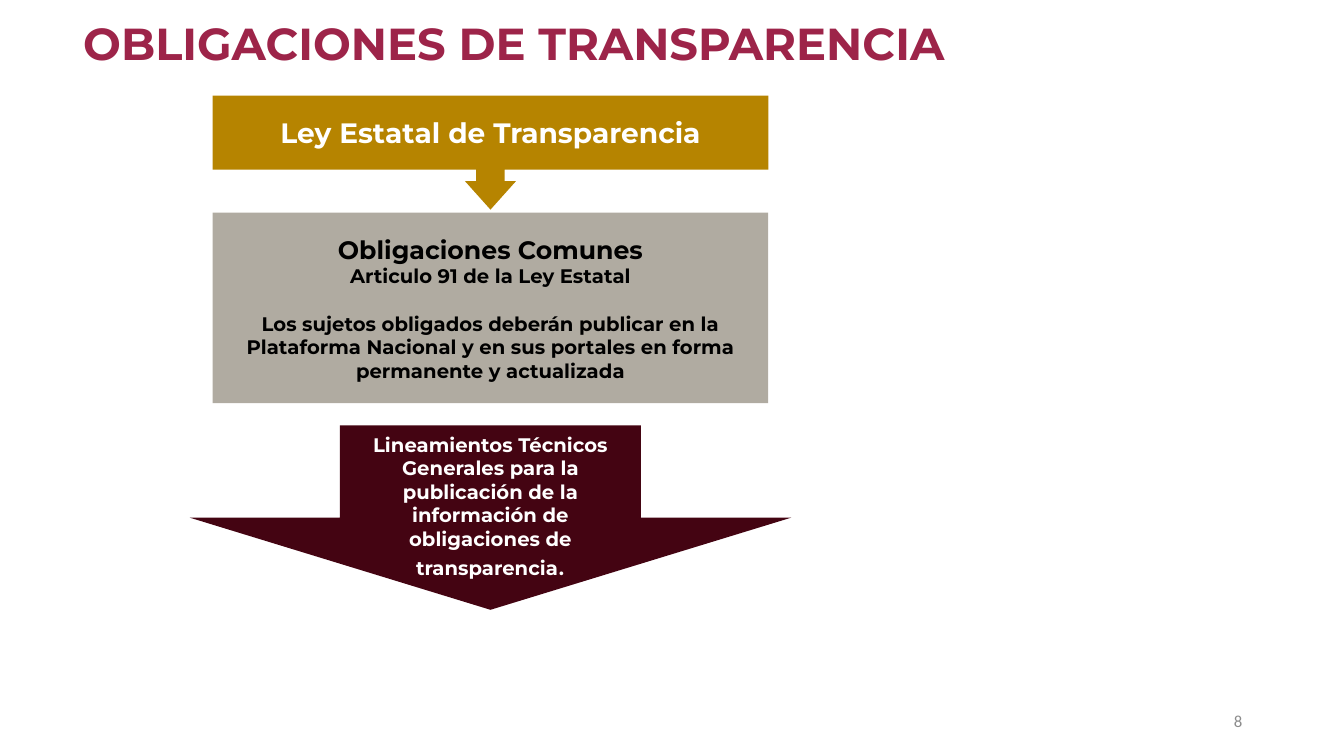
from dataclasses import dataclass

from pptx import Presentation
from pptx.dml.color import RGBColor
from pptx.enum.shapes import MSO_SHAPE
from pptx.enum.text import MSO_ANCHOR, PP_ALIGN
from pptx.util import Inches, Pt

RECT = MSO_SHAPE.RECTANGLE
CALLOUT = MSO_SHAPE.DOWN_ARROW_CALLOUT
DOWN_ARROW = MSO_SHAPE.DOWN_ARROW
TOP, MIDDLE, BOTTOM = MSO_ANCHOR.TOP, MSO_ANCHOR.MIDDLE, MSO_ANCHOR.BOTTOM
CENTER, RIGHT = PP_ALIGN.CENTER, PP_ALIGN.RIGHT


@dataclass(frozen=True)
class Theme:
    head_font: str = "Montserrat"
    body_font: str = "Calibri"
    title: str = "9D2449"
    gold: str = "B68400"
    stone: str = "B0ABA1"
    wine: str = "440412"
    white: str = "FFFFFF"
    black: str = "000000"
    gray: str = "8C8C8C"
    title_size: int = 32
    law_size: int = 20
    heading_size: int = 18
    text_size: int = 14
    number_size: int = 12


def add_run(p, text, *, font, size, color, bold=True):
    r = p.add_run()
    r.text = text
    r.font.name = font
    r.font.size = Pt(size)
    r.font.bold = bold
    r.font.color.rgb = RGBColor.from_string(color)


class SlideBuilder:
    def __init__(self, slide, theme):
        self.slide = slide
        self.theme = theme

    def paragraph(self, tf, text, align=CENTER, before=0, spacing=None, **fmt):
        """Write into the empty first paragraph, or append a new one."""
        first = tf.paragraphs[0]
        p = tf.add_paragraph() if first.runs else first
        p.alignment = align
        if before:
            p.space_before = Pt(before)
        if spacing:
            p.line_spacing = spacing
        add_run(p, text, **{"font": self.theme.head_font, **fmt})
        return p

    def text_box(self, left, top, width, height, anchor):
        s = self.slide.shapes.add_textbox(
            Inches(left), Inches(top), Inches(width), Inches(height))
        return self.frame(s, anchor)

    def shape(self, kind, left, top, width, height, fill, anchor=MIDDLE, adjust=()):
        s = self.slide.shapes.add_shape(
            kind, Inches(left), Inches(top), Inches(width), Inches(height))
        s.shadow.inherit = False
        s.fill.solid()
        s.fill.fore_color.rgb = RGBColor.from_string(fill)
        s.line.fill.background()
        for i, value in enumerate(adjust):
            s.adjustments[i] = value
        return self.frame(s, anchor)

    def frame(self, s, anchor):
        tf = s.text_frame
        tf.word_wrap = True
        tf.vertical_anchor = anchor
        return tf


def main():
    prs = Presentation()
    prs.slide_width, prs.slide_height = Inches(13.33), Inches(7.5)
    t = Theme()
    b = SlideBuilder(prs.slides.add_slide(prs.slide_layouts[6]), t)
    box_left, box_width = 2.11, 5.51

    tf = b.text_box(0, 0.09, 10.2, 0.66, BOTTOM)
    b.paragraph(tf, "OBLIGACIONES DE TRANSPARENCIA", spacing=0.9,
                size=t.title_size, color=t.title)

    tf = b.text_box(9.42, 6.95, 3, 0.4, MIDDLE)
    b.paragraph(tf, "8", RIGHT, font=t.body_font, size=t.number_size,
                color=t.gray, bold=False)

    tf = b.shape(CALLOUT, box_left, 0.95, box_width, 1.13, t.gold,
                 adjust=(0.25, 0.224, 0.25, 0.65))
    b.paragraph(tf, "Ley Estatal de Transparencia", size=t.law_size, color=t.white)

    tf = b.shape(RECT, box_left, 2.11, box_width, 1.89, t.stone)
    b.paragraph(tf, "Obligaciones Comunes", size=t.heading_size, color=t.black)
    b.paragraph(tf, "Articulo 91 de la Ley Estatal", size=t.text_size, color=t.black)
    b.paragraph(tf, "Los sujetos obligados deberán publicar en la Plataforma Nacional "
                "y en sus portales en forma permanente y actualizada",
                before=17, size=t.text_size, color=t.black)

    tf = b.shape(DOWN_ARROW, 1.88, 4.22, 5.97, 1.83, t.wine, TOP)
    tf.margin_top, tf.margin_bottom = Inches(0.07), 0
    p = b.paragraph(tf, "Lineamientos Técnicos Generales para la publicación de la "
                    "información de obligaciones de transparencia",
                    size=t.text_size, color=t.white)
    add_run(p, ".", font=t.body_font, size=t.heading_size, color=t.white)

    prs.save("out.pptx")


if __name__ == "__main__":
    main()
